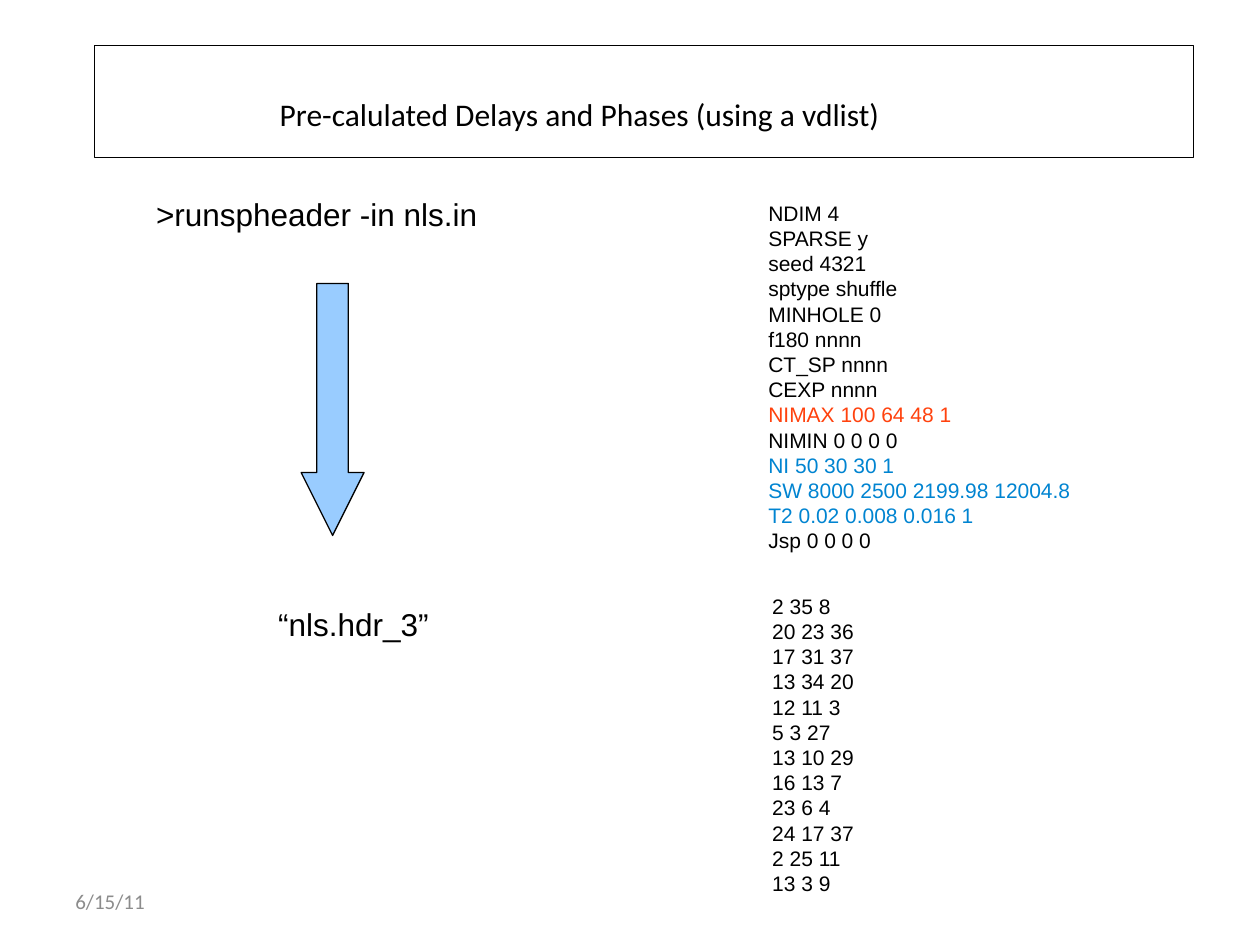
from pptx import Presentation
from pptx.dml.color import RGBColor
from pptx.enum import shapes, text
from pptx.util import Inches, Pt

BLACK = RGBColor(0x00, 0x00, 0x00)
GREY = RGBColor(0x8C, 0x8C, 0x8C)
RED = RGBColor(0xFF, 0x42, 0x0E)
BLUE = RGBColor(0x00, 0x84, 0xD1)
LIGHT_BLUE = RGBColor(0x99, 0xCC, 0xFF)

SETTINGS = [
    ("NDIM 4", BLACK),
    ("SPARSE y", BLACK),
    ("seed 4321", BLACK),
    ("sptype shuffle", BLACK),
    ("MINHOLE 0", BLACK),
    ("f180 nnnn", BLACK),
    ("CT_SP nnnn", BLACK),
    ("CEXP nnnn", BLACK),
    ("NIMAX 100 64 48 1", RED),
    ("NIMIN 0 0 0 0", BLACK),
    ("NI 50 30 30 1", BLUE),
    ("SW 8000 2500 2199.98 12004.8", BLUE),
    ("T2 0.02 0.008 0.016 1", BLUE),
    ("Jsp 0 0 0 0", BLACK),
]
SCHEDULE = ["2 35 8", "20 23 36", "17 31 37", "13 34 20", "12 11 3", "5 3 27",
            "13 10 29", "16 13 7", "23 6 4", "24 17 37", "2 25 11", "13 3 9"]


def write_lines(tf, lines, size, font):
    """Write one left-aligned paragraph for each (words, colour) pair."""
    for i, (words, color) in enumerate(lines):
        p = tf.paragraphs[0] if i == 0 else tf.add_paragraph()
        p.alignment = text.PP_ALIGN.LEFT
        r = p.add_run()
        r.text = words
        r.font.size = Pt(size)
        r.font.name = font
        r.font.color.rgb = color


def add_text(s, box, lines, size, font="Arial"):
    """Add a wrapping text box and return its text frame."""
    tf = s.shapes.add_textbox(*map(Inches, box)).text_frame
    tf.word_wrap = True
    write_lines(tf, lines, size, font)
    return tf


def add_outlined(s, kind, box, fill=None):
    """Add a preset shape with a thin black outline."""
    sp = s.shapes.add_shape(kind, *map(Inches, box))
    sp.shadow.inherit = False
    if fill is None:
        sp.fill.background()
    else:
        sp.fill.solid()
        sp.fill.fore_color.rgb = fill
    sp.line.color.rgb = BLACK
    sp.line.width = Pt(0.75)
    return sp


def add_title(s, words):
    """Add the framed title, inset from the left and top of its frame."""
    sp = add_outlined(s, shapes.MSO_SHAPE.RECTANGLE, (0.75, 0.36, 8.72, 0.89))
    tf = sp.text_frame
    tf.word_wrap = True
    tf.vertical_anchor = text.MSO_ANCHOR.TOP
    tf.margin_left, tf.margin_top = Inches(1.47), Inches(0.39)
    write_lines(tf, [(words, BLACK)], 18, "Calibri")


def add_arrow(s, box):
    """Add the down arrow, its head as long as the arrow is wide."""
    sp = add_outlined(s, shapes.MSO_SHAPE.DOWN_ARROW, box, LIGHT_BLUE)
    sp.adjustments[0] = 0.5
    sp.adjustments[1] = 1


def main():
    """Build the slide and save it."""
    prs = Presentation()
    prs.slide_width, prs.slide_height = Inches(10), Inches(7.5)
    s = prs.slides.add_slide(prs.slide_layouts[6])
    date = add_text(s, (0.5, 6.95, 2.33, 0.4), [("6/15/11", GREY)], 12, "Calibri")
    date.vertical_anchor = text.MSO_ANCHOR.MIDDLE
    add_title(s, "Pre-calulated Delays and Phases (using a vdlist)")
    add_arrow(s, (2.39, 2.25, 0.5, 2))
    add_text(s, (1.14, 1.5, 2.9, 0.38), [(">runspheader -in nls.in", BLACK)], 18)
    add_text(s, (6, 1.54, 2.7, 2.71), SETTINGS, 12)
    add_text(s, (6.03, 4.66, 0.95, 2.34), [(row, BLACK) for row in SCHEDULE], 12)
    add_text(s, (2.11, 4.75, 1.55, 0.38), [("“nls.hdr_3”", BLACK)], 18)
    prs.save("out.pptx")


if __name__ == "__main__":
    main()
